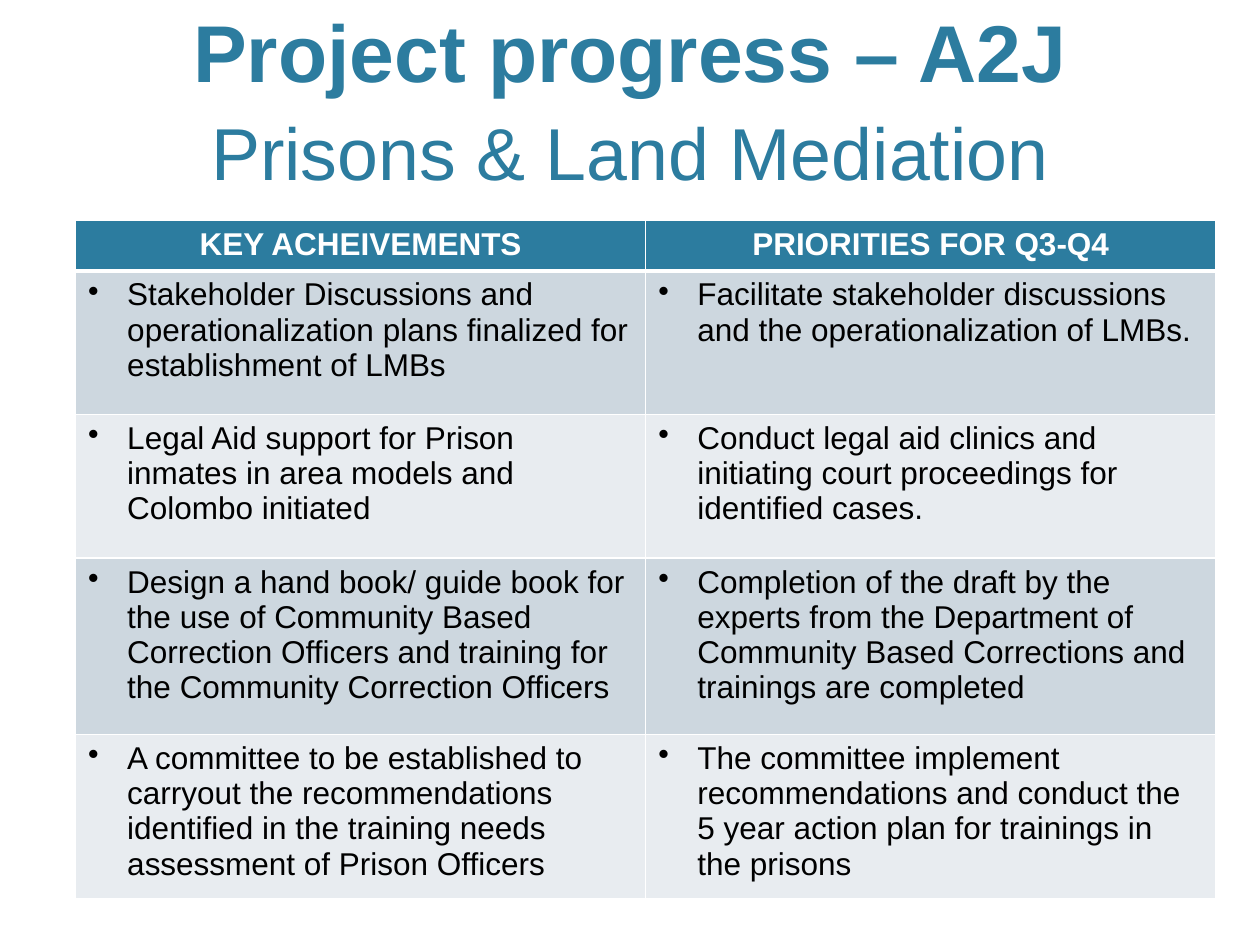
from lxml.etree import SubElement
from pptx import Presentation
from pptx.dml.color import RGBColor
from pptx.enum.text import MSO_ANCHOR, PP_ALIGN
from pptx.oxml.ns import qn
from pptx.util import Inches, Pt

TEAL, WHITE, BLACK = "2C7C9F", "FFFFFF", "000000"
BAND_FILLS = ("CDD7DF", "E8ECF0")
HEADINGS = ("KEY ACHEIVEMENTS", "PRIORITIES FOR Q3-Q4")
PROGRESS = (
    ("Stakeholder Discussions and operationalization plans finalized for establishment of LMBs",
     "Facilitate stakeholder discussions and the operationalization of LMBs."),
    ("Legal Aid support for Prison inmates in area models and Colombo initiated",
     "Conduct legal aid clinics and initiating court proceedings for identified cases."),
    ("Design a hand book/ guide book for the use of Community Based Correction Officers "
     "and training for the Community Correction Officers",
     "Completion of the draft by the experts from the Department of Community Based "
     "Corrections and trainings are completed"),
    ("A committee to be established to carryout the recommendations identified in the "
     "training needs assessment of Prison Officers",
     "The committee implement recommendations and conduct the 5 year action plan for "
     "trainings in the prisons"),
)
ROW_HEIGHTS = (0.35, 1.14, 1.14, 1.4, 1.28)


def color(value):
    return RGBColor.from_string(value)


class SlideBuilder:
    font_name = "Arial"
    body_size = 18
    bullet_indent = Inches(0.31)

    def __init__(self, slide):
        self.slide = slide

    def style(self, font, size, fill, bold=False):
        font.name, font.size, font.bold = self.font_name, Pt(size), bold
        font.color.rgb = color(fill)

    def title(self, left, top, width, height, heading, subheading):
        box = self.slide.shapes.add_textbox(
            Inches(left), Inches(top), Inches(width), Inches(height))
        frame = box.text_frame
        frame.word_wrap = True
        frame.vertical_anchor = MSO_ANCHOR.BOTTOM
        frame.margin_bottom = Inches(0.03)
        para = frame.paragraphs[0]
        para.alignment = PP_ALIGN.CENTER
        para.line_spacing = 1.1
        for text, size, bold in ((heading, 46, True), (subheading, 42, False)):
            if para.runs:
                para.add_line_break()
            span = para.add_run()
            span.text = text
            self.style(span.font, size, TEAL, bold)

    def table(self, left, top, width, heights, rows):
        columns = len(rows[0])
        table = self.slide.shapes.add_table(
            len(rows), columns, Inches(left), Inches(top),
            Inches(width), Inches(sum(heights))).table
        for row, height in zip(table.rows, heights):
            row.height = Inches(height)
        for row_index, texts in enumerate(rows):
            for column_index, text in enumerate(texts):
                self.cell(table.cell(row_index, column_index), row_index, text)

    def cell(self, cell, row_index, text):
        is_header = row_index == 0
        self.borders(cell, top=3 if row_index == 1 else 1, bottom=3 if is_header else 1)
        cell.fill.solid()
        cell.fill.fore_color.rgb = color(TEAL if is_header else BAND_FILLS[(row_index - 1) % 2])
        para = cell.text_frame.paragraphs[0]
        para.text = text
        self.style(para.font, self.body_size, WHITE if is_header else BLACK, is_header)
        if is_header:
            para.alignment = PP_ALIGN.CENTER
        else:
            self.bullet(para)

    def borders(self, cell, top, bottom):
        properties = cell._tc.get_or_add_tcPr()
        for side, points in (("L", 1), ("R", 1), ("T", top), ("B", bottom)):
            line = SubElement(properties, qn(f"a:ln{side}"), w=str(Pt(points)))
            fill = SubElement(line, qn("a:solidFill"))
            SubElement(fill, qn("a:srgbClr"), val=WHITE)

    def bullet(self, para):
        properties = para._p.get_or_add_pPr()
        properties.set("marL", str(self.bullet_indent))
        properties.set("indent", str(-self.bullet_indent))
        # The bullet belongs before the default run properties
        default_run = properties.find(qn("a:defRPr"))
        mark = SubElement(properties, qn("a:buChar"), char="•")
        if default_run is not None:
            default_run.addprevious(mark)


def main():
    deck = Presentation()
    deck.slide_width, deck.slide_height = Inches(10), Inches(7.5)
    page = SlideBuilder(deck.slides.add_slide(deck.slide_layouts[6]))

    # Title
    page.title(0.6, 0.12, 8.8, 1.46, "Project progress – A2J", "Prisons & Land Mediation")

    # Achievements beside priorities
    page.table(0.6, 1.75, 9.05, ROW_HEIGHTS, (HEADINGS, *PROGRESS))

    deck.save("out.pptx")


if __name__ == "__main__":
    main()
